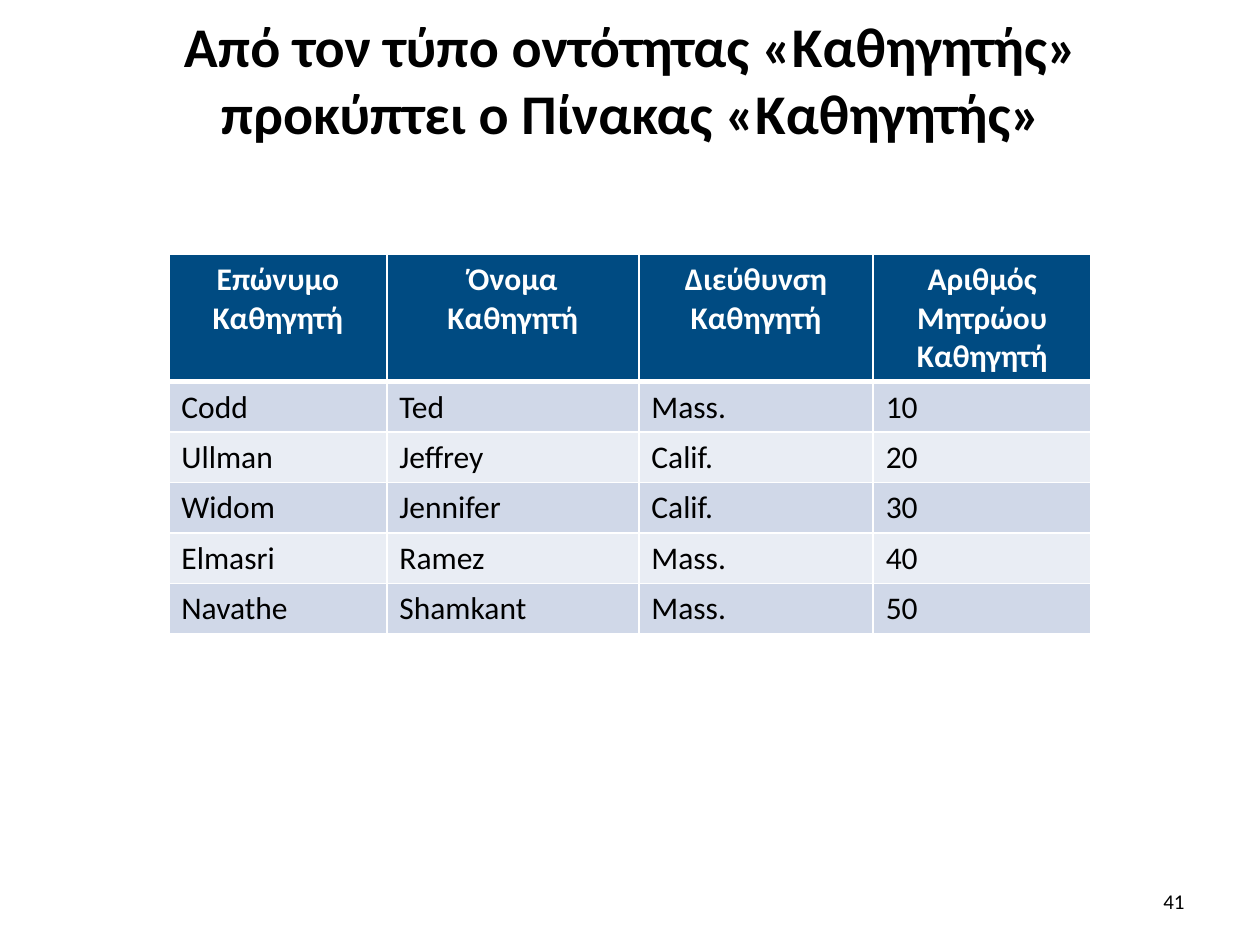
from lxml.etree import SubElement
from pptx import Presentation
from pptx.dml.color import RGBColor
from pptx.enum.text import MSO_ANCHOR as Anchor, PP_ALIGN as Align
from pptx.oxml.ns import qn
from pptx.util import Inches, Pt

FONT = "Calibri"
BLACK, WHITE, NAVY = "000000", "FFFFFF", "004B82"
BANDS = ["D0D8E8", "E9EDF4"]
COLUMN_WIDTHS = [1.73, 2, 1.86, 1.73]
HEADER_HEIGHT, ROW_HEIGHT = 1.01, 0.4
PROFESSORS = [
    ["Επώνυμο Καθηγητή", "Όνομα Καθηγητή", "Διεύθυνση Καθηγητή",
     "Αριθμός Μητρώου Καθηγητή"],
    ["Codd", "Ted", "Mass.", "10"],
    ["Ullman", "Jeffrey", "Calif.", "20"],
    ["Widom", "Jennifer", "Calif.", "30"],
    ["Elmasri", "Ramez", "Mass.", "40"],
    ["Navathe", "Shamkant", "Mass.", "50"],
]


def color(value):
    return RGBColor.from_string(value)


def write(text_frame, text, size, fill=BLACK, bold=False, align=Align.LEFT):
    paragraph = text_frame.paragraphs[0]
    paragraph.alignment = align
    run = paragraph.add_run()
    run.text = text
    run.font.name = FONT
    run.font.size = Pt(size)
    run.font.bold = bold
    run.font.color.rgb = color(fill)


def add_text(slide, box, text, size, **style):
    shape = slide.shapes.add_textbox(*map(Inches, box))
    shape.text_frame.word_wrap = True
    shape.text_frame.vertical_anchor = Anchor.MIDDLE
    write(shape.text_frame, text, size, **style)


def set_borders(cell, **widths):
    """Draw white cell borders; widths are points by side: L, R, T, B."""
    properties = cell._tc.get_or_add_tcPr()
    for side, width in widths.items():
        line = SubElement(properties, qn(f"a:ln{side}"), w=str(Pt(width)))
        fill = SubElement(line, qn("a:solidFill"))
        SubElement(fill, qn("a:srgbClr"), val=WHITE)


def add_professor_table(slide, left, top):
    heights = [HEADER_HEIGHT] + [ROW_HEIGHT] * (len(PROFESSORS) - 1)
    table = slide.shapes.add_table(
        len(heights), len(COLUMN_WIDTHS), Inches(left), Inches(top),
        Inches(sum(COLUMN_WIDTHS)), Inches(sum(heights))).table
    for column, width in zip(table.columns, COLUMN_WIDTHS):
        column.width = Inches(width)
    for i, values in enumerate(PROFESSORS):
        table.rows[i].height = Inches(heights[i])
        header = i == 0
        for j, value in enumerate(values):
            cell = table.cell(i, j)
            set_borders(cell, L=1, R=1, T=3 if i == 1 else 1,
                        B=3 if header else 1)
            cell.fill.solid()
            cell.fill.fore_color.rgb = color(NAVY if header else BANDS[(i - 1) % 2])
            write(cell.text_frame, value, 18, WHITE if header else BLACK,
                  header, Align.CENTER if header else Align.LEFT)


def main():
    presentation = Presentation()
    presentation.slide_width = Inches(10)
    presentation.slide_height = Inches(7.5)
    slide = presentation.slides.add_slide(presentation.slide_layouts[6])
    add_text(slide, (0.51, 0.13, 9, 0.99),
             "Από τον τύπο οντότητας «Καθηγητής» προκύπτει ο Πίνακας «Καθηγητής»",
             32, bold=True, align=Align.CENTER)
    add_professor_table(slide, 1.34, 2.02)
    add_text(slide, (7.17, 6.95, 2.33, 0.4), "41", 12, align=Align.RIGHT)
    presentation.save("out.pptx")


if __name__ == "__main__":
    main()
